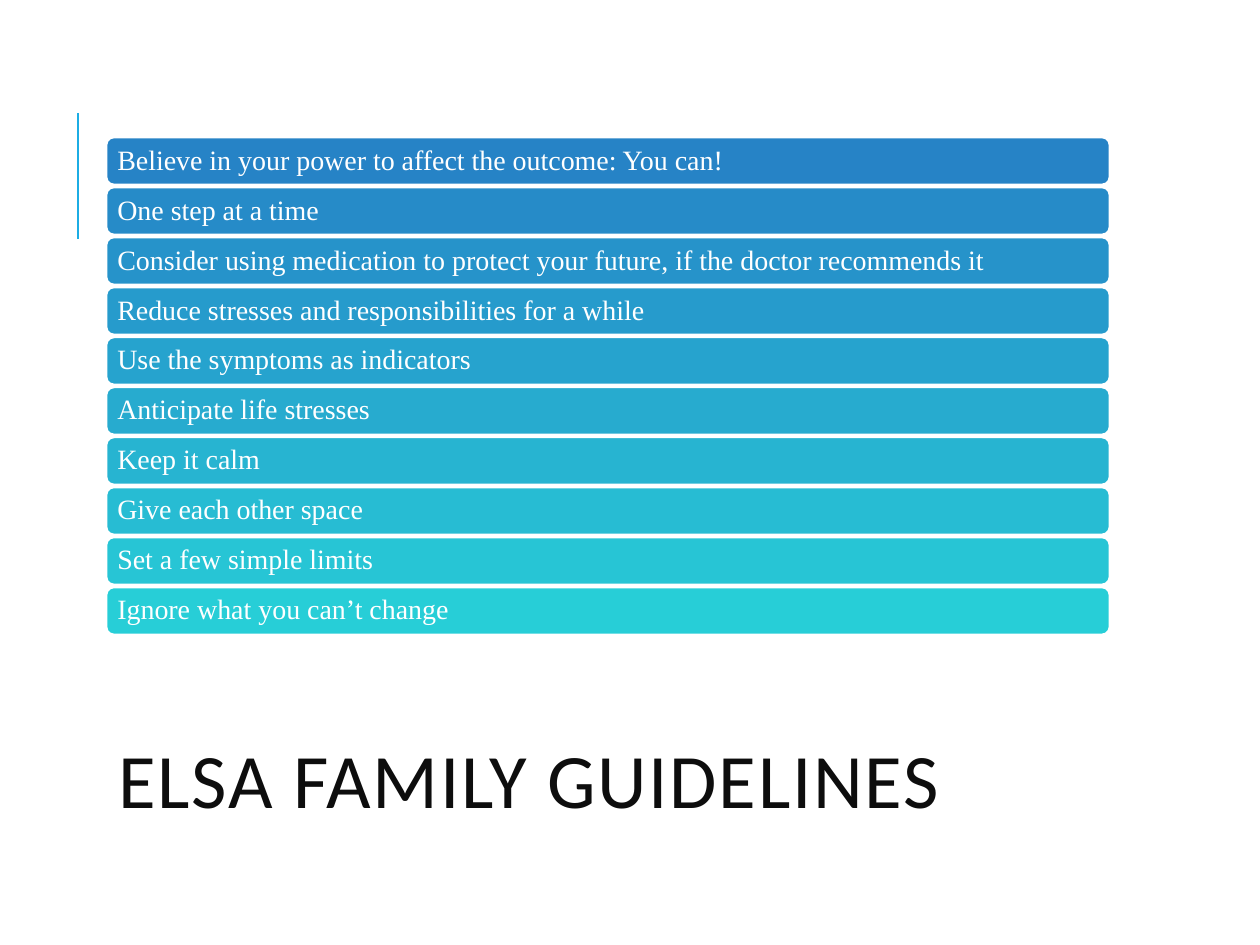
from lxml.etree import SubElement
from pptx import Presentation
from pptx.dml.color import RGBColor
from pptx.enum.shapes import MSO_CONNECTOR as Connector, MSO_SHAPE as Shape
from pptx.enum.text import MSO_ANCHOR as Anchor, PP_ALIGN as Align
from pptx.oxml.ns import qn
from pptx.util import Pt

SCALE = 914400 / 126
COLORS = {
    "accent": "1CADE4",
    "title": "0D0D0D",
    "white": "FFFFFF",
}
GUIDELINES = {
    "Believe in your power to affect the outcome: You can!": "2683C6",
    "One step at a time": "268BC8",
    "Consider using medication to protect your future, if the doctor recommends it": "2693CA",
    "Reduce stresses and responsibilities for a while": "269BCC",
    "Use the symptoms as indicators": "26A3CE",
    "Anticipate life stresses": "27ABCF",
    "Keep it calm": "27B4D1",
    "Give each other space": "27BCD3",
    "Set a few simple limits": "27C5D5",
    "Ignore what you can’t change": "27CED7",
}


def px(length):
    return round(length * SCALE)


def rgb(name):
    return RGBColor.from_string(COLORS[name])


def write(shape, text, font_name, size, color, line_spacing):
    text_frame = shape.text_frame
    text_frame.text = text
    text_frame.word_wrap = True
    text_frame.vertical_anchor = Anchor.MIDDLE
    paragraph = text_frame.paragraphs[0]
    paragraph.alignment = Align.LEFT
    paragraph.line_spacing = line_spacing
    font = paragraph.runs[0].font
    font.name = font_name
    font.size = Pt(size)
    font.color.rgb = rgb(color)
    return paragraph.runs[0]


def add_accent_line(slide, left, top, height):
    line = slide.shapes.add_connector(
        Connector.STRAIGHT, px(left), px(top + height), px(left), px(top)
    )
    line.line.color.rgb = rgb("accent")
    line.line.width = Pt(1.5)
    SubElement(line._element.spPr, qn("a:effectLst"))


def add_title(slide, left, top, width, height):
    title = slide.shapes.add_textbox(px(left), px(top), px(width), px(height))
    run = write(title, "ELSA FAMILY GUIDELINES", "Calibri", 44, "title", 0.8)
    run._r.get_or_add_rPr().set("spc", "100")


def add_guidelines(slide, left, top, width, height, gap):
    count = len(GUIDELINES)
    bar_height = (height - gap * (count - 1)) // count
    for index, (text, fill) in enumerate(GUIDELINES.items()):
        bar_top = top + index * (bar_height + gap)
        bar = slide.shapes.add_shape(
            Shape.ROUNDED_RECTANGLE, px(left), px(bar_top), px(width), px(bar_height)
        )
        bar.shadow.inherit = False
        bar.fill.solid()
        bar.fill.fore_color.rgb = RGBColor.from_string(fill)
        bar.line.color.rgb = rgb("white")
        bar.line.width = Pt(1.5)
        text_frame = bar.text_frame
        text_frame.margin_left = text_frame.margin_right = px(9)
        text_frame.margin_top = text_frame.margin_bottom = px(9)
        write(bar, text, "Times New Roman", 16, "white", 0.9)


def main():
    presentation = Presentation()
    presentation.slide_width = px(1260)
    presentation.slide_height = px(945)
    slide = presentation.slides.add_slide(presentation.slide_layouts[6])
    add_accent_line(slide, 78, 113, 126)
    add_title(slide, 106, 683, 1004, 207)
    add_guidelines(slide, 106, 137, 1004, 498, 2)
    presentation.save("out.pptx")


if __name__ == "__main__":
    main()
